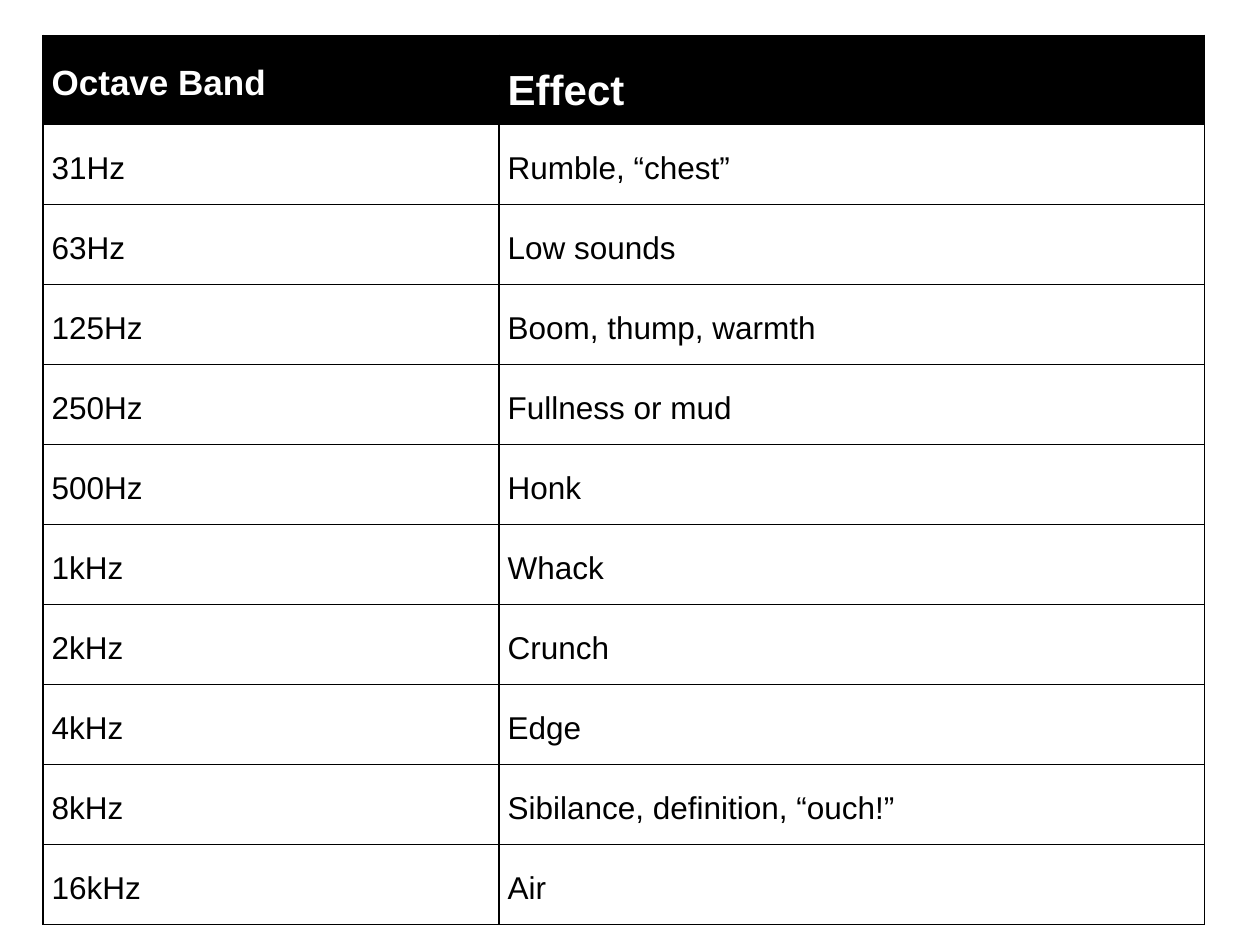
import dataclasses

import lxml.etree
import pptx
import pptx.dml.color
import pptx.enum.text
import pptx.oxml.ns
import pptx.table
import pptx.util

Inches = pptx.util.Inches
Pt = pptx.util.Pt

BLACK = pptx.dml.color.RGBColor(0x00, 0x00, 0x00)
WHITE = pptx.dml.color.RGBColor(0xFF, 0xFF, 0xFF)

# Table geometry
LEFT, TOP = Inches(0.34), Inches(0.28)
COLUMN_WIDTHS = (Inches(3.62), Inches(5.6))
TABLE_HEIGHT, HEADER_HEIGHT = Inches(7.06), Inches(0.71)
BORDER_WIDTH = Pt(1)

CELL_FORMAT = {
    "margin_left": Inches(0.07),
    "margin_right": Inches(0.07),
    "margin_top": Inches(0.07),
    "margin_bottom": Inches(0.07),
    "vertical_anchor": pptx.enum.text.MSO_ANCHOR.TOP,
}


@dataclasses.dataclass(frozen=True)
class CellStyle:
    size: int
    bold: bool
    color: pptx.dml.color.RGBColor
    fill: pptx.dml.color.RGBColor


@dataclasses.dataclass(frozen=True)
class Band:
    frequency: str
    effect: str


BAND_HEADER = CellStyle(20, True, WHITE, BLACK)
EFFECT_HEADER = CellStyle(24, True, WHITE, BLACK)
BODY = CellStyle(18, False, BLACK, WHITE)

BANDS = (
    Band("31Hz", "Rumble, “chest”"),
    Band("63Hz", "Low sounds"),
    Band("125Hz", "Boom, thump, warmth"),
    Band("250Hz", "Fullness or mud"),
    Band("500Hz", "Honk"),
    Band("1kHz", "Whack"),
    Band("2kHz", "Crunch"),
    Band("4kHz", "Edge"),
    Band("8kHz", "Sibilance, definition, “ouch!”"),
    Band("16kHz", "Air"),
)


def set_format(target: object, values: dict) -> None:
    for name, value in values.items():
        setattr(target, name, value)


def add_borders(cell: pptx.table._Cell) -> None:
    """Outline all four sides; borders must come before the fill."""
    properties = cell._tc.get_or_add_tcPr()
    qualified = pptx.oxml.ns.qn
    for position, side in enumerate(("a:lnL", "a:lnR", "a:lnT", "a:lnB")):
        line = lxml.etree.Element(qualified(side), w=str(BORDER_WIDTH))
        fill = lxml.etree.SubElement(line, qualified("a:solidFill"))
        lxml.etree.SubElement(fill, qualified("a:srgbClr"), val=str(BLACK))
        properties.insert(position, line)


def write_cell(cell: pptx.table._Cell, text: str, style: CellStyle) -> None:
    set_format(cell, CELL_FORMAT)
    cell.fill.solid()
    cell.fill.fore_color.rgb = style.fill
    add_borders(cell)
    paragraph = cell.text_frame.paragraphs[0]
    paragraph.line_spacing = 1.5
    run = paragraph.add_run()
    run.text = text
    set_format(run.font, {"name": "Arial", "size": Pt(style.size), "bold": style.bold})
    run.font.color.rgb = style.color


def add_band_table(slide: pptx.slide.Slide) -> None:
    table = slide.shapes.add_table(
        len(BANDS) + 1, len(COLUMN_WIDTHS), LEFT, TOP, sum(COLUMN_WIDTHS), TABLE_HEIGHT
    ).table
    set_format(table, {"first_row": False, "horz_banding": False})
    for column, width in zip(table.columns, COLUMN_WIDTHS):
        column.width = width

    # Header row
    table.rows[0].height = HEADER_HEIGHT
    write_cell(table.cell(0, 0), "Octave Band", BAND_HEADER)
    write_cell(table.cell(0, 1), "Effect", EFFECT_HEADER)

    # One equal row per octave band
    row_height = (TABLE_HEIGHT - HEADER_HEIGHT) // len(BANDS)
    for row, band in enumerate(BANDS, start=1):
        table.rows[row].height = row_height
        write_cell(table.cell(row, 0), band.frequency, BODY)
        write_cell(table.cell(row, 1), band.effect, BODY)


def main() -> None:
    presentation = pptx.Presentation()
    set_format(presentation, {"slide_width": Inches(10), "slide_height": Inches(7.5)})
    slide = presentation.slides.add_slide(presentation.slide_layouts[6])
    add_band_table(slide)
    presentation.save("out.pptx")


if __name__ == "__main__":
    main()
